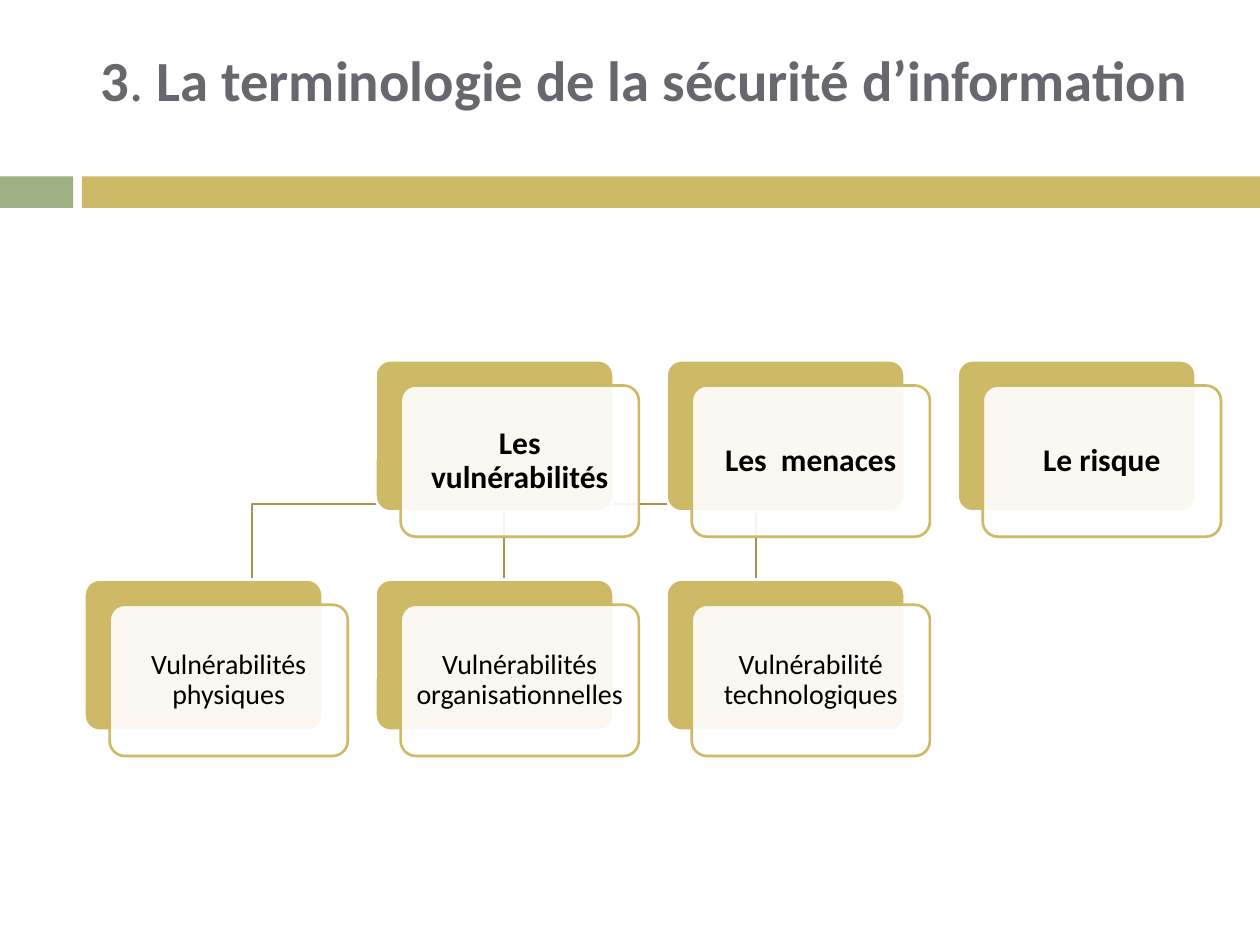
"""Build the slide on information security terminology: a tree of stacked cards."""
from lxml import etree
from pptx import Presentation
from pptx import util as u
from pptx.dml.color import RGBColor
from pptx.enum import shapes, text
from pptx.oxml.ns import qn

COLORS = {"gold": "CEB966", "green": "9CB084", "branch": "A59452",
          "title": "69676D", "ink": "000000", "paper": "FFFFFF"}
FONT = "Calibri"
LEFT, COLUMN = 0.67, 2.31
TERM_ROW, KIND_ROW = 2.86, 4.6
CARD_W, CARD_H = 1.89, 1.2
SHIFT = 0.2
FORK = 4.43


def add_block(kind, left, top, width, height, fill, line=None):
    block = slide.shapes.add_shape(kind, *map(u.Inches, (left, top, width, height)))
    block.shadow.inherit = False
    block.fill.solid()
    block.fill.fore_color.rgb = RGBColor.from_string(COLORS[fill])
    if line:
        block.adjustments[0] = 0.1
        block.line.color.rgb = RGBColor.from_string(COLORS[line])
        block.line.width = u.Pt(1.5)
    else:
        block.line.fill.background()
    return block


def add_run(paragraph, words, size, color, bold):
    run = paragraph.add_run()
    run.text = words
    run.font.name = FONT
    run.font.size = u.Pt(size)
    run.font.bold = bold
    run.font.color.rgb = RGBColor.from_string(COLORS[color])


deck = Presentation()
deck.slide_width, deck.slide_height = u.Inches(10), u.Inches(7.5)
slide = deck.slides.add_slide(deck.slide_layouts[5])

for left, width, fill in ((0, 0.58, "green"), (0.65, 9.35, "gold")):
    add_block(shapes.MSO_SHAPE.RECTANGLE, left, 1.4, width, 0.25, fill)

heading = slide.shapes.title
heading.left, heading.top = u.Inches(0.7), u.Inches(0.47)
heading.width, heading.height = u.Inches(8.92), u.Inches(0.86)
heading_frame = heading.text_frame
heading_frame.auto_size = text.MSO_AUTO_SIZE.NONE
heading_frame.vertical_anchor = text.MSO_ANCHOR.MIDDLE
heading_frame.margin_bottom = u.Inches(0.6)
heading_frame.paragraphs[0].alignment = text.PP_ALIGN.LEFT
for words, bold in (("3", True), (". ", False),
                    ("La terminologie de la sécurité d’information", True)):
    add_run(heading_frame.paragraphs[0], words, 32.4, "title", bold)

centers = [LEFT + COLUMN * column + CARD_W / 2 for column in range(3)]
trunk = centers[1]
for center in reversed(centers):
    branch_builder = slide.shapes.build_freeform(trunk, TERM_ROW + CARD_H, scale=u.Inches(1))
    corners = [(trunk, FORK), (center, FORK)] if center != trunk else []
    branch_builder.add_line_segments(corners + [(center, KIND_ROW)], close=False)
    branch = branch_builder.convert_to_shape()
    branch.shadow.inherit = False
    branch.fill.background()
    branch.line.color.rgb = RGBColor.from_string(COLORS["branch"])
    branch.line.width = u.Pt(1.5)

levels = (
    (TERM_ROW, 1, 18, True, ("Les vulnérabilités", "Les  menaces", "Le risque")),
    (KIND_ROW, 0, 16, False, ("Vulnérabilités physiques",
                              "Vulnérabilités organisationnelles",
                              "Vulnérabilité technologiques")),
)
for top, first_column, size, bold, labels in levels:
    for column, label in enumerate(labels, first_column):
        left = LEFT + COLUMN * column
        rounded = shapes.MSO_SHAPE.ROUNDED_RECTANGLE
        add_block(rounded, left, top, CARD_W, CARD_H, "gold", "paper")
        card = add_block(rounded, left + SHIFT, top + SHIFT, CARD_W, CARD_H, "paper", "gold")
        paper = card._element.spPr.find(qn("a:solidFill")).find(qn("a:srgbClr"))
        etree.SubElement(paper, qn("a:alpha"), val="90000")
        frame = card.text_frame
        frame.word_wrap = True
        frame.vertical_anchor = text.MSO_ANCHOR.MIDDLE
        frame.margin_left = frame.margin_right = u.Inches(0.07)
        frame.margin_top = frame.margin_bottom = u.Inches(0.07)
        frame.paragraphs[0].alignment = text.PP_ALIGN.CENTER
        frame.paragraphs[0].line_spacing = 0.9
        add_run(frame.paragraphs[0], label, size, "ink", bold)

deck.save("out.pptx")
